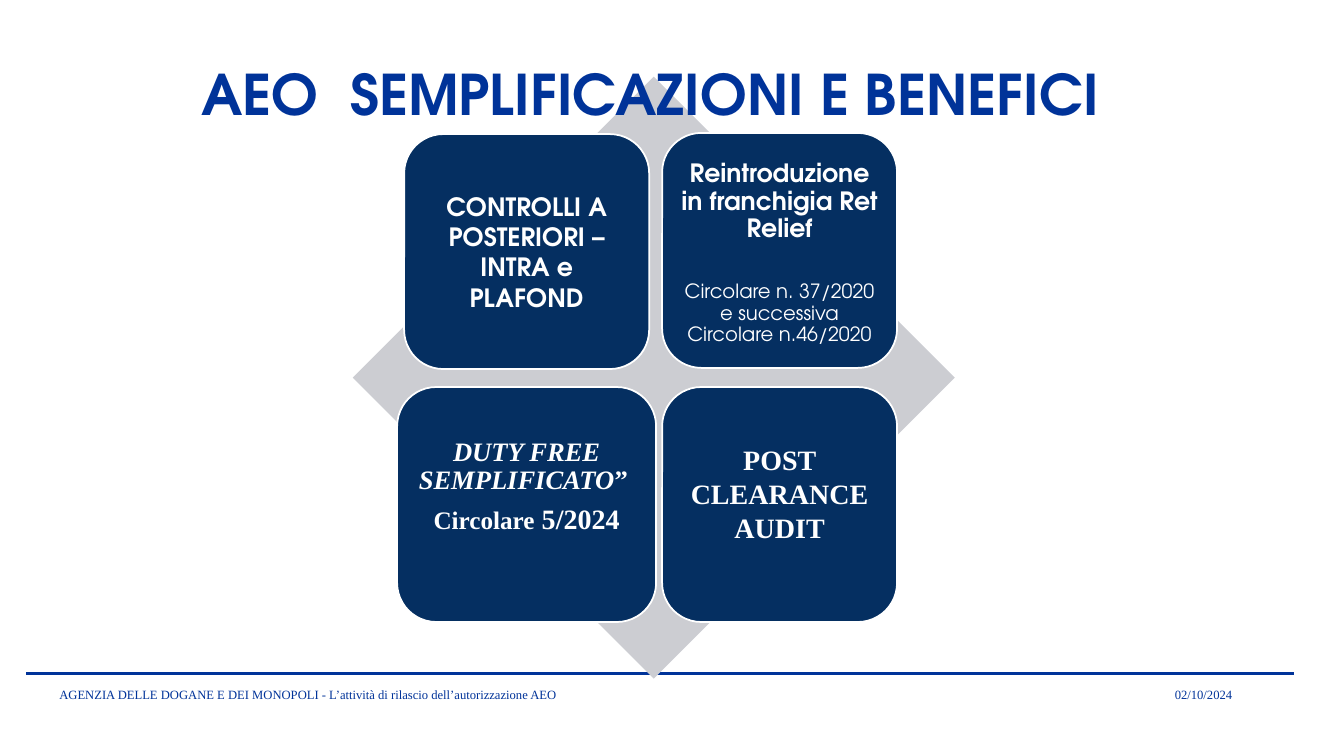
from dataclasses import dataclass

from lxml import etree
from pptx import Presentation
from pptx.dml.color import RGBColor
from pptx.enum.shapes import MSO_CONNECTOR, MSO_SHAPE
from pptx.enum.text import MSO_ANCHOR, PP_ALIGN
from pptx.oxml.ns import qn
from pptx.util import Pt

DIAMOND, ROUNDED = MSO_SHAPE.DIAMOND, MSO_SHAPE.ROUNDED_RECTANGLE
STRAIGHT = MSO_CONNECTOR.STRAIGHT
TOP, MIDDLE, BOTTOM = MSO_ANCHOR.TOP, MSO_ANCHOR.MIDDLE, MSO_ANCHOR.BOTTOM
LEFT, CENTER, RIGHT = PP_ALIGN.LEFT, PP_ALIGN.CENTER, PP_ALIGN.RIGHT


@dataclass(frozen=True)
class Theme:
    blue: RGBColor = RGBColor(0x00, 0x33, 0x99)
    navy: RGBColor = RGBColor(0x05, 0x2F, 0x61)
    grey: RGBColor = RGBColor(0xCC, 0xCD, 0xD2)
    white: RGBColor = RGBColor(0xFF, 0xFF, 0xFF)
    sans: str = "TeX Gyre Adventor"
    serif: str = "Times New Roman"
    title: int = 40
    large: int = 20
    duty: int = 19
    body: int = 18
    note: int = 14
    footer: int = 9


@dataclass
class Run:
    text: str
    size: int
    font: str
    bold: bool = True
    italic: bool = False


@dataclass
class Para:
    runs: list
    spacing: float = 1.0
    before: float = 0


class Deck:
    def __init__(self, theme, width, height):
        self.theme = theme
        self.prs = Presentation()
        self.prs.slide_width, self.prs.slide_height = Pt(width), Pt(height)
        self.s = self.prs.slides.add_slide(self.prs.slide_layouts[6])

    def fill_text(self, tf, paras, color, align):
        tf.word_wrap = True
        for i, para in enumerate(paras):
            p = tf.paragraphs[0] if i == 0 else tf.add_paragraph()
            p.alignment = align
            p.line_spacing = para.spacing
            if i:
                p.space_before = Pt(para.before)
            for run in para.runs:
                r = p.add_run()
                r.text = run.text
                r.font.name, r.font.size = run.font, Pt(run.size)
                r.font.bold, r.font.italic = run.bold, run.italic
                r.font.color.rgb = color

    def text(self, box, run, align=LEFT, anchor=TOP):
        sp = self.s.shapes.add_textbox(*map(Pt, box))
        sp.text_frame.vertical_anchor = anchor
        self.fill_text(sp.text_frame, [Para([run])], self.theme.blue, align)

    def shape(self, kind, box, fill):
        sp = self.s.shapes.add_shape(kind, *map(Pt, box))
        sp.shadow.inherit = False
        sp.fill.solid()
        sp.fill.fore_color.rgb = fill
        sp.line.fill.background()
        return sp

    def card(self, box, paras, inset, extra_top=0, extra_bottom=0):
        """Extra insets move the centred text down or up."""
        sp = self.shape(ROUNDED, box, self.theme.navy)
        sp.line.color.rgb, sp.line.width = self.theme.white, Pt(1.25)
        tf = sp.text_frame
        tf.vertical_anchor = MIDDLE
        tf.margin_left = tf.margin_right = Pt(inset)
        tf.margin_top = Pt(inset + extra_top)
        tf.margin_bottom = Pt(inset + extra_bottom)
        self.fill_text(tf, paras, self.theme.white, CENTER)

    def rule(self, x1, x2, y):
        line = self.s.shapes.add_connector(STRAIGHT, Pt(x1), Pt(y), Pt(x2), Pt(y))
        line.line.color.rgb, line.line.width = self.theme.blue, Pt(2.25)
        etree.SubElement(line._element.spPr, qn("a:effectLst"))


def main():
    t = Theme()
    deck = Deck(t, 960, 540)
    deck.rule(18.7, 924.5, 481)
    deck.shape(DIAMOND, (252, 54.7, 430, 430), t.grey)

    side, right, lower = 167.8, 473, 276.5
    deck.card((288.7, 95.8, 175, side), [
        Para([Run("CONTROLLI A POSTERIORI – INTRA e PLAFOND", t.body, t.sans)]),
    ], inset=5)
    deck.card((right, 95, side, side), [
        Para([Run("Reintroduzione in franchigia Ret Relief", t.body, t.sans)], 0.9),
        Para([Run("Circolare n. 37/2020 e successiva Circolare n.46/2020",
                  t.note, t.sans, bold=False)], 0.9, before=28),
    ], inset=5, extra_top=4)
    deck.card((283.7, lower, 185, side), [
        Para([Run("DUTY FREE SEMPLIFICATO", t.duty, t.serif, italic=True),
              Run("” ", t.duty, t.serif)], 0.9),
        Para([Run("Circolare", t.body, t.serif),
              Run(" 5/2024", t.large, t.serif)], 0.9, before=7),
    ], inset=5.8, extra_bottom=25)
    deck.card((right, lower, side, side), [
        Para([Run("POST CLEARANCE AUDIT", t.large, t.serif)]),
    ], inset=5.8, extra_bottom=16)

    deck.text((35.3, 476, 680, 28.8),
              Run("AGENZIA DELLE DOGANE E DEI MONOPOLI - L’attività di rilascio "
                  "dell’autorizzazione AEO", t.footer, t.serif, bold=False),
              anchor=BOTTOM)
    deck.text((781.2, 476, 106, 28.8),
              Run("02/10/2024", t.footer, t.serif, bold=False), RIGHT, BOTTOM)
    deck.text((136.8, 38.9, 710.6, 55.4),
              Run("AEO  SEMPLIFICAZIONI E BENEFICI", t.title, t.sans))
    deck.prs.save("out.pptx")


if __name__ == "__main__":
    main()
